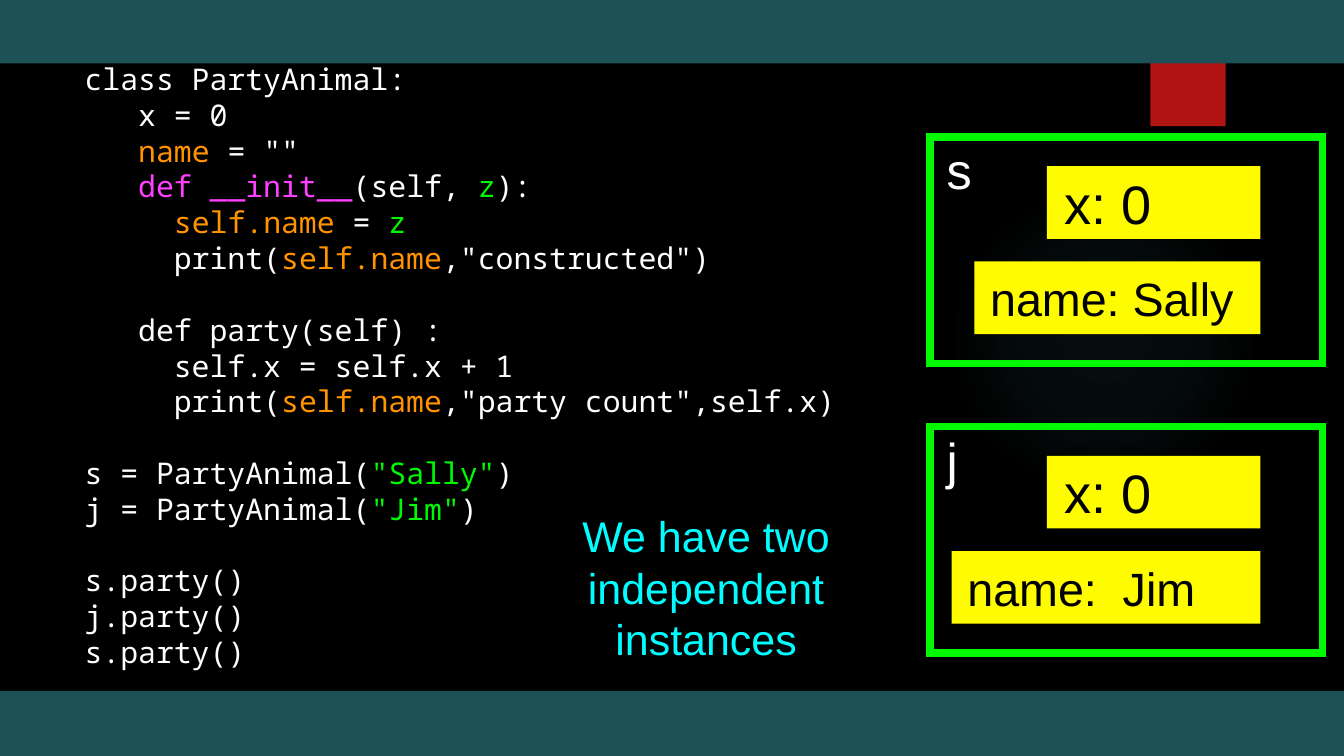
from collections import namedtuple

from lxml import etree
from pptx import Presentation
from pptx.dml.color import RGBColor
from pptx.enum.shapes import MSO_SHAPE as Preset
from pptx.enum.text import MSO_ANCHOR as Anchor, PP_ALIGN as Align
from pptx.oxml.ns import nsdecls, qn
from pptx.util import Inches, Pt

COLORS = {
    "black": "000000", "white": "FFFFFF", "band": "1E5155", "tab": "B01513",
    "glow": "50B9C1", "orange": "FF9300", "magenta": "FF40FF",
    "green": "00F900", "yellow": "FFFB00", "cyan": "00FDFF",
}
CODE_SIZE, CODE_LINE = 16, 19.2
INSET = Inches(0.02)

# Each code line is a list of (text, color) runs; an empty line is a gap
NAME = ("self.name", "orange")
CODE = [
    [("class PartyAnimal:", "white")],
    [("   x = 0", "white")],
    [("   ", "white"), ("name", "orange"), (' = ""', "white")],
    [("   ", "white"), ("def __init__", "magenta"), ("(self, ", "white"),
     ("z", "green"), ("):", "white")],
    [("     ", "white"), NAME, (" = ", "white"), ("z", "green")],
    [("     print(", "white"), NAME, (',"constructed")', "white")],
    [],
    [("   def party(self) :", "white")],
    [("     self.x = self.x + 1", "white")],
    [("     print(", "white"), NAME, (',"party count",self.x)', "white")],
    [],
    [("s = PartyAnimal(", "white"), ('"Sally"', "green"), (")", "white")],
    [("j = PartyAnimal(", "white"), ('"Jim"', "green"), (")", "white")],
    [],
    [("s.party()", "white")],
    [("j.party()", "white")],
    [("s.party()", "white")],
]

Box = namedtuple("Box", "left top width height")


def part(box, left, top, width, height):
    """Return the box at the given percentages of another box."""
    return Box(round(box.left + box.width * left / 100),
               round(box.top + box.height * top / 100),
               round(box.width * width / 100),
               round(box.height * height / 100))


def rgb(name):
    return RGBColor.from_string(COLORS[name])


def add_block(shapes, box, fill=None, line=None, preset=Preset.RECTANGLE):
    block = shapes.add_shape(preset, *box)
    block.shadow.inherit = False
    if fill:
        block.fill.solid()
        block.fill.fore_color.rgb = rgb(fill)
    else:
        block.fill.background()
    if line:
        block.line.color.rgb = rgb(line)
        block.line.width = Pt(4)
        # Square corners
        block.element.spPr.find(qn("a:ln")).append(
            etree.fromstring(f'<a:miter {nsdecls("a")} lim="800000"/>'))
    else:
        block.line.fill.background()
    return block


def write(holder, lines, size, font="Arial", color="white", align=Align.LEFT,
          anchor=Anchor.MIDDLE, indent=0, pitch=None):
    """Write lines, each a string or a list of (text, color) runs."""
    frame = holder.text_frame
    frame.word_wrap = True
    frame.vertical_anchor = anchor
    frame.margin_left = INSET + Pt(indent)
    frame.margin_right = frame.margin_top = frame.margin_bottom = INSET
    paragraph, gap = None, 0
    for line in lines:
        if not line:
            gap += pitch
            continue
        paragraph = frame.add_paragraph() if paragraph else frame.paragraphs[0]
        paragraph.alignment = align
        if pitch:
            paragraph.line_spacing = Pt(pitch)
        if gap:
            paragraph.space_before = Pt(gap)
            gap = 0
        for text, tint in [(line, color)] if isinstance(line, str) else line:
            run = paragraph.add_run()
            run.text = text
            run.font.size, run.font.name = Pt(size), font
            run.font.color.rgb = rgb(tint)


def add_backdrop(shapes, box):
    # Faint round glow
    glow = add_block(shapes, part(box, 70.6, 24.5, 23.1, 41.1),
                     preset=Preset.OVAL)
    stops = "".join(
        f'<a:gs pos="{pos}000"><a:srgbClr val="{COLORS["glow"]}">'
        f'<a:alpha val="{alpha}000"/></a:srgbClr></a:gs>'
        for pos, alpha in ((0, 7), (36, 6), (69, 0)))
    gradient = etree.fromstring(
        f'<a:gradFill {nsdecls("a")}><a:gsLst>{stops}</a:gsLst>'
        '<a:path path="circle"><a:fillToRect l="50000" t="50000" r="50000" '
        'b="50000"/></a:path></a:gradFill>')
    properties = glow.element.spPr
    properties.replace(properties.find(qn("a:noFill")), gradient)

    # Red tab with its soft shadow
    tab = add_block(shapes, part(box, 85.6, 0, 5.6, 16.7), "tab")
    tab.element.spPr.find(qn("a:effectLst")).append(etree.fromstring(
        f'<a:outerShdw {nsdecls("a")} blurRad="{Pt(3)}" dist="{Pt(2)}" '
        f'dir="5400000"><a:srgbClr val="{COLORS["black"]}">'
        '<a:alpha val="45000"/></a:srgbClr></a:outerShdw>'))

    # Bands along the top and bottom
    add_block(shapes, part(box, 0, 0, 100, 8.4), "band")
    add_block(shapes, part(box, 0, 91.4, 100, 8.6), "band")


def add_code(shapes, box):
    write(shapes.add_textbox(*box), CODE, CODE_SIZE, font="Noto Sans Mono",
          pitch=CODE_LINE)


def add_instance(shapes, box, variable, name, name_left):
    group = shapes.add_group_shape().shapes
    write(add_block(group, box, line="green"), [variable], 27,
          anchor=Anchor.TOP, indent=7.5)
    # Attributes share a right edge
    right = 84.2
    for text, size, indent, left, top in (("x: 0", 29, 8, 29.8, 13),
                                          (name, 25, 7, name_left, 55)):
        attribute = add_block(group, part(box, left, top, right - left, 32),
                              "yellow")
        write(attribute, [text], size, color="black", indent=indent)


def add_caption(shapes, box):
    write(shapes.add_textbox(*box), ["We have two independent instances"], 23,
          color="cyan", align=Align.CENTER)


def main():
    deck = Presentation()
    deck.slide_width = Inches(10)
    deck.slide_height = deck.slide_width * 9 // 16
    slide = deck.slides.add_slide(deck.slide_layouts[6])
    slide.background.fill.solid()
    slide.background.fill.fore_color.rgb = rgb("black")
    page = Box(0, 0, deck.slide_width, deck.slide_height)
    shapes = slide.shapes

    add_backdrop(shapes, page)
    add_code(shapes, part(page, 6.1, 3.4, 61.6, 89.8))
    for top, variable, name, name_left in (
            (18.1, "s", "name: Sally", 11.3), (56.4, "j", "name:  Jim", 5.5)):
        add_instance(shapes, part(page, 69.2, top, 29.2, 30),
                     variable, name, name_left)
    add_caption(shapes, part(page, 39.3, 67.6, 26.5, 20.1))
    deck.save("out.pptx")


if __name__ == "__main__":
    main()
